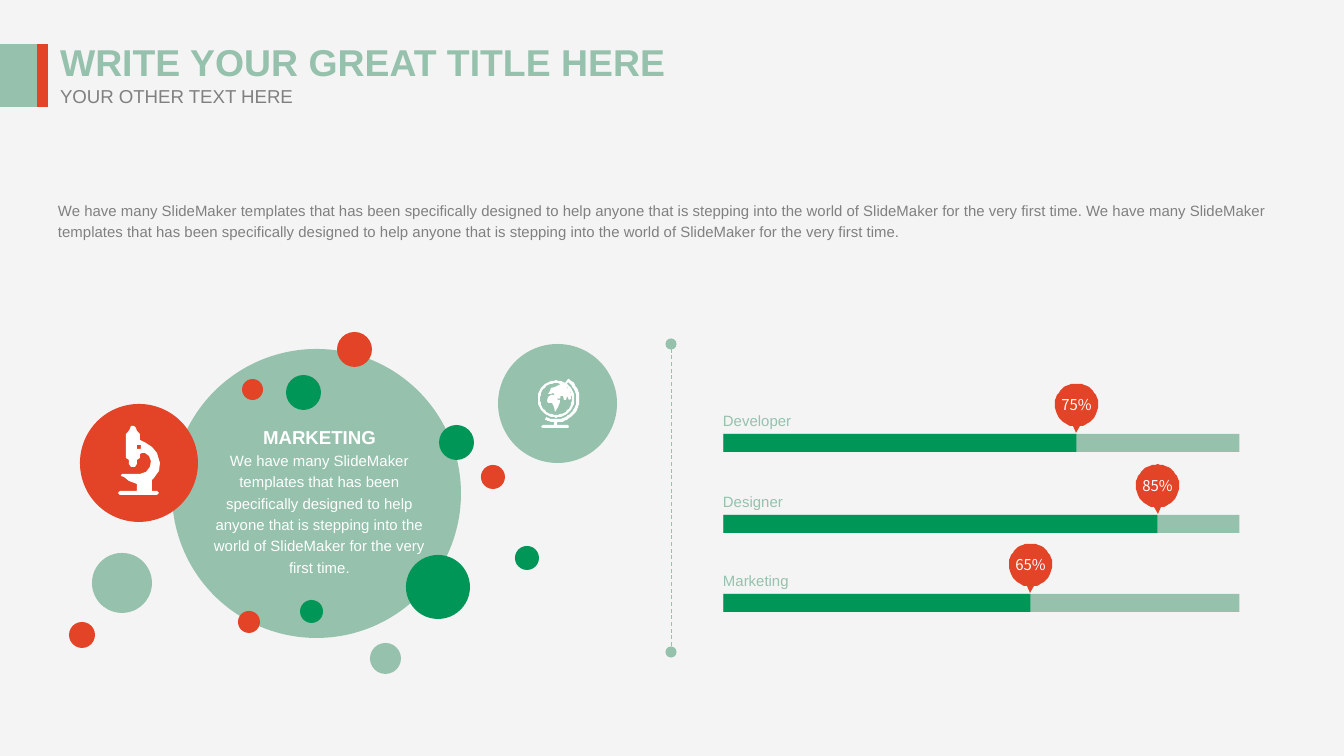
from math import cos, radians, sin

from lxml.etree import SubElement
from pptx import Presentation
from pptx.dml.color import RGBColor
from pptx.enum.dml import MSO_LINE_DASH_STYLE as Dash
from pptx.enum.shapes import MSO_CONNECTOR_TYPE as Connector, MSO_SHAPE as Shape
from pptx.enum.text import MSO_ANCHOR as Anchor, MSO_AUTO_SIZE as AutoSize, PP_ALIGN as Align
from pptx.oxml.ns import qn
from pptx.util import Pt

EMU_PER_PX = 9144000 / 1344
COLORS = {"paper": "F4F4F4", "sage": "95C1AD", "green": "009658",
          "red": "E34326", "grey": "808080", "white": "FFFFFF"}
SENTENCE = ("We have many SlideMaker templates that has been specifically designed to help "
            "anyone that is stepping into the world of SlideMaker for the very first time.")
BUBBLES = [
    (172, 349, 289, "sage"), (286, 375, 35, "green"), (337, 332, 35, "red"),
    (242, 379, 21, "red"), (439, 425, 35, "green"), (481, 465, 24, "red"),
    (515, 546, 24, "green"), (406, 555, 64, "green"), (238, 611, 22, "red"),
    (300, 600, 23, "green"), (370, 643, 31, "sage"), (92, 553, 60, "sage"),
    (69, 622, 26, "red"), (80, 404, 118, "red"), (498, 344, 119, "sage"),
]
SKILLS = [("Developer", "75%", 434, 353), ("Designer", "85%", 515, 434),
          ("Marketing", "65%", 594, 307)]
MICROSCOPE = [
    (157, 491), (152, 491), (152, 480), (154, 478), (159, 471), (160, 463), (157, 453),
    (152, 447), (146, 443), (140, 440), (140, 434), (137, 431), (136, 428), (134, 426),
    (131, 426), (130, 429), (128, 432), (126, 434), (126, 458), (129, 460), (129, 464),
    (131, 467), (135, 467), (137, 464), (137, 460), (140, 458), (140, 454), (142, 453),
    (145, 453), (149, 456), (151, 461), (150, 467), (146, 472), (140, 474), (122, 474),
    (121, 476), (124, 477), (129, 481), (137, 484), (137, 491), (120, 491), (118, 493),
    (120, 495), (157, 495), (159, 493),
]
CONTINENTS = [
    (561, 384), (555, 387), (551, 388), (550, 391), (548, 394), (551, 394), (553, 393),
    (555, 395), (551, 395), (548, 397), (547, 401), (548, 403), (552, 403), (554, 407),
    (555, 412), (558, 407), (560, 402), (560, 400), (558, 400), (556, 398), (559, 399),
    (561, 397), (559, 396), (563, 396), (564, 400), (566, 400), (567, 396), (569, 400),
    (571, 399), (571, 395), (569, 389), (566, 386),
]
GLOBE_STAND = [(554, 422), (557, 422), (557, 425), (568, 425), (569, 427), (568, 428),
               (543, 428), (541, 427), (543, 425), (554, 425)]


def px(length):
    """Turn px into EMU."""
    return round(length * EMU_PER_PX)


def rgb(name):
    """Look up a named colour."""
    return RGBColor.from_string(COLORS[name])


def apply(target, values):
    """Set every attribute named in a dict."""
    for name, value in values.items():
        setattr(target, name, value)


def paint(shape, color):
    """Give a shape a flat fill with neither line nor shadow."""
    shape.shadow.inherit = False
    shape.fill.solid()
    shape.fill.fore_color.rgb = rgb(color)
    shape.line.fill.background()


def add_preset(page, kind, box, color):
    """Add a flat preset shape."""
    paint(page.shapes.add_shape(kind, *map(px, box)), color)


def add_outline(page, contours, color):
    """Add one flat freeform made of closed contours."""
    first, *others = contours
    builder = page.shapes.build_freeform(*first[0], scale=EMU_PER_PX)
    builder.add_line_segments(first[1:], close=True)
    for contour in others:
        builder.move_to(*contour[0])
        builder.add_line_segments(contour[1:], close=True)
    paint(builder.convert_to_shape(), color)


def arc(x, y, radius, start=0, end=360, steps=48):
    """Return points along a clockwise arc, with angles in degrees."""
    angles = [radians(start + (end - start) * i / steps) for i in range(steps + 1)]
    return [(x + radius * cos(a), y + radius * sin(a)) for a in angles]


def write(shape, paragraphs, color, align=Align.LEFT, anchor=Anchor.TOP,
          wrap=True, inset=(0, 0), spacing=None):
    """Fill a text shape with paragraphs of text and font values."""
    across, down = map(px, inset)
    frame = shape.text_frame
    apply(frame, {"auto_size": AutoSize.NONE, "word_wrap": wrap, "vertical_anchor": anchor,
                  "margin_left": across, "margin_right": across,
                  "margin_top": down, "margin_bottom": down})
    for index, (text, font) in enumerate(paragraphs):
        para = frame.add_paragraph() if index else frame.paragraphs[0]
        apply(para, {"alignment": align, "line_spacing": spacing})
        span = para.add_run()
        span.text = text
        apply(span.font, {"name": "Arial", "size": Pt(8), "bold": False, **font})
        span.font.color.rgb = rgb(color)


def add_text(page, box, paragraphs, color, **layout):
    """Add a text box."""
    write(page.shapes.add_textbox(*map(px, box)), paragraphs, color, **layout)


def add_divider(page, x, top, bottom):
    """Add the dashed vertical line with round ends."""
    line = page.shapes.add_connector(Connector.STRAIGHT, px(x), px(top), px(x), px(bottom))
    apply(line.line, {"width": Pt(0.5), "dash_style": Dash.DASH})
    line.line.color.rgb = rgb("sage")
    for end in ("a:headEnd", "a:tailEnd"):
        SubElement(line.line._get_or_add_ln(), qn(end), type="oval")
    SubElement(line._element.spPr, qn("a:effectLst"))


def add_skill(page, label, percent, top, width):
    """Add one progress bar with its label and percent pin."""
    left, height, radius = 723.5, 18, 21.5
    x, y = left + width, top - 29
    add_preset(page, Shape.RECTANGLE, (left, top, 516, height), "sage")
    add_preset(page, Shape.RECTANGLE, (left, top, width, height), "green")
    add_outline(page, [arc(x, y, radius, 100, 440) + [(x, y + 28)]], "red")
    add_text(page, (x - 16, y - 9, 32, 18), [(percent, {"name": "Noto Sans CJK SC"})], "white",
             align=Align.CENTER, anchor=Anchor.MIDDLE, wrap=False)
    add_text(page, (710, y, 98, 31), [(label, {})], "sage", wrap=False, inset=(13, 7))


def add_icons(page):
    """Add the microscope and the globe."""
    add_outline(page, [MICROSCOPE, arc(139, 447, 2.5)], "white")
    x, y = 556, 399
    arm = arc(x, y, 23.5, -60, 118) + arc(x, y, 20.5, 118, -55)
    arm += arc(x, y, 18.5, -55, -62, 2)
    add_outline(page, [arc(x, y, 18.5), arc(x, y, 16), arm, CONTINENTS, GLOBE_STAND], "white")


def add_heading(page):
    """Add the title, the subtitle and the colour tabs."""
    title = page.shapes.title
    apply(title, dict(zip(("left", "top", "width", "height"), map(px, (47, 32, 636, 58)))))
    write(title, [("WRITE YOUR GREAT TITLE HERE", {"size": Pt(20), "bold": True})], "sage",
          wrap=False, inset=(13, 7))
    add_text(page, (47, 78, 261, 36), [("YOUR OTHER TEXT HERE", {"size": Pt(10)})], "grey",
             wrap=False, inset=(13, 7))
    add_preset(page, Shape.RECTANGLE, (37, 44, 11, 63), "red")
    add_preset(page, Shape.RECTANGLE, (0, 44, 37, 63), "sage")


def main():
    """Build the slide and save it."""
    deck = Presentation()
    apply(deck, {"slide_width": px(1344), "slide_height": px(756)})
    page = deck.slides.add_slide(deck.slide_layouts[5])
    page.background.fill.solid()
    page.background.fill.fore_color.rgb = rgb("paper")
    add_heading(page)
    add_text(page, (58, 198, 1227, 43), [(f"{SENTENCE} {SENTENCE}", {})], "grey", spacing=1.2)
    for left, top, size, color in BUBBLES:
        add_preset(page, Shape.OVAL, (left, top, size, size), color)
    add_icons(page)
    add_text(page, (214, 421, 211, 156),
             [("MARKETING", {"size": Pt(10), "bold": True}), (SENTENCE, {})],
             "white", align=Align.CENTER, spacing=1.2)
    add_divider(page, 671, 344, 652)
    for skill in SKILLS:
        add_skill(page, *skill)
    deck.save("out.pptx")


if __name__ == "__main__":
    main()
